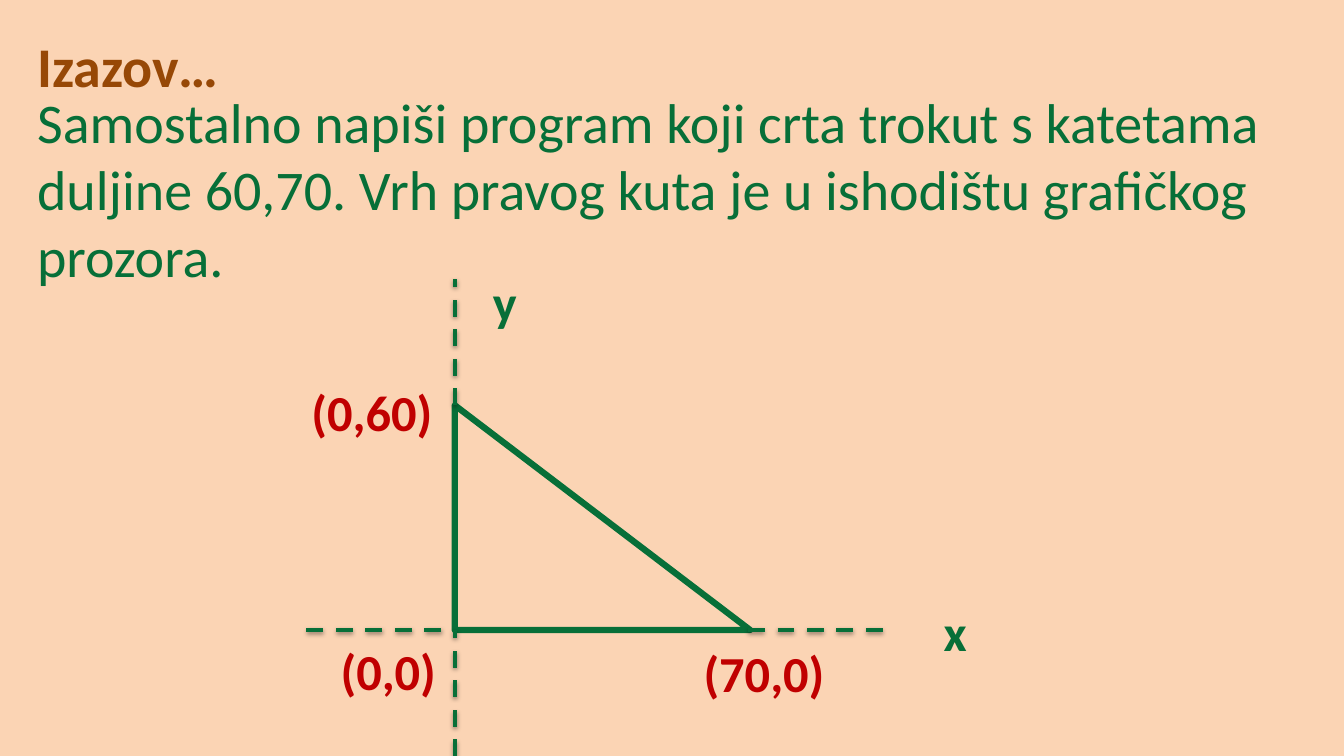
from dataclasses import dataclass

from lxml import etree
from pptx import Presentation
from pptx.dml.color import RGBColor
from pptx.enum.dml import MSO_LINE
from pptx.enum.shapes import MSO_CONNECTOR, MSO_SHAPE
from pptx.enum.text import MSO_ANCHOR
from pptx.oxml import parse_xml
from pptx.oxml.ns import nsdecls, qn
from pptx.util import Inches, Pt

RIGHT_TRIANGLE = MSO_SHAPE.RIGHT_TRIANGLE
STRAIGHT = MSO_CONNECTOR.STRAIGHT
DASH = MSO_LINE.DASH
TOP = MSO_ANCHOR.TOP
BLANK_LAYOUT = 6


@dataclass(frozen=True)
class Theme:
    font: str = "Calibri"
    background: RGBColor = RGBColor(0xFB, 0xD4, 0xB4)
    heading: RGBColor = RGBColor(0x97, 0x48, 0x06)
    green: RGBColor = RGBColor(0x07, 0x6F, 0x38)
    red: RGBColor = RGBColor(0xC0, 0x00, 0x00)
    text_size: Pt = Pt(40)
    label_size: Pt = Pt(36)
    triangle_width: Pt = Pt(4.5)
    axis_width: Pt = Pt(3)


THEME = Theme()

# Triangle geometry in inches: the right angle sits at the origin of the axes.
ORIGIN_X, ORIGIN_Y = 4.51, 6.25
BASE, HEIGHT = 2.93, 2.23
APEX_Y = ORIGIN_Y - HEIGHT
AXIS_Y_LENGTH = 1.25
AXIS_X_LENGTH = 1.42
LABEL_HEIGHT = 0.71
AXIS_LABEL_WIDTH, POINT_LABEL_WIDTH = 0.79, 1.54


def add_text(slide, text, left, top, width, height, size, color, bold=True):
    box = slide.shapes.add_textbox(Inches(left), Inches(top), Inches(width), Inches(height))
    frame = box.text_frame
    frame.word_wrap = True
    frame.vertical_anchor = TOP
    run = frame.paragraphs[0].add_run()
    run.text = text
    run.font.name = THEME.font
    run.font.size = size
    run.font.bold = bold
    run.font.color.rgb = color


def add_label(slide, text, left, top, width, color):
    add_text(slide, text, left, top, width, LABEL_HEIGHT, THEME.label_size, color)


def add_triangle(slide):
    triangle = slide.shapes.add_shape(
        RIGHT_TRIANGLE, Inches(ORIGIN_X), Inches(APEX_Y), Inches(BASE), Inches(HEIGHT)
    )
    triangle.shadow.inherit = False
    triangle.fill.background()
    triangle.line.color.rgb = THEME.green
    triangle.line.width = THEME.triangle_width


def add_soft_shadow(connector):
    """Put a faint shadow just below the line."""
    effects = parse_xml(f"<a:effectLst {nsdecls('a')}/>")
    shadow = etree.SubElement(
        effects, qn("a:outerShdw"),
        blurRad=str(Pt(3.1)), dist=str(Pt(1.6)), dir="5400000", rotWithShape="0",
    )
    color = etree.SubElement(shadow, qn("a:srgbClr"), val="000000")
    etree.SubElement(color, qn("a:alpha"), val="38000")
    connector._element.spPr.append(effects)


def add_axis_part(slide, start_x, start_y, end_x, end_y):
    connector = slide.shapes.add_connector(
        STRAIGHT, Inches(start_x), Inches(start_y), Inches(end_x), Inches(end_y)
    )
    connector.line.color.rgb = THEME.green
    connector.line.width = THEME.axis_width
    connector.line.dash_style = DASH
    add_soft_shadow(connector)


def add_axes(slide):
    for start_y in (APEX_Y, ORIGIN_Y + AXIS_Y_LENGTH):
        add_axis_part(slide, ORIGIN_X, start_y, ORIGIN_X, start_y - AXIS_Y_LENGTH)
    for start_x in (3.04, 7.42):
        add_axis_part(slide, start_x, ORIGIN_Y, start_x + AXIS_X_LENGTH, ORIGIN_Y)


def main():
    presentation = Presentation()
    presentation.slide_width = Inches(13.33)
    presentation.slide_height = Inches(7.5)
    slide = presentation.slides.add_slide(presentation.slide_layouts[BLANK_LAYOUT])
    slide.background.fill.solid()
    slide.background.fill.fore_color.rgb = THEME.background

    add_text(slide, "Izazov…", 0.27, 0.26, 12, 1.01, THEME.text_size, THEME.heading)
    add_text(
        slide,
        "Samostalno napiši program koji crta trokut s katetama duljine 60,70. "
        "Vrh pravog kuta je u ishodištu grafičkog prozora.",
        0.27, 0.82, 12.5, 4.95, THEME.text_size, THEME.green, bold=False,
    )

    add_triangle(slide)
    add_axes(slide)
    for text, left, top in (("y", 4.79, 2.64), ("x", 9.26, 5.91)):
        add_label(slide, text, left, top, AXIS_LABEL_WIDTH, THEME.green)
    for text, left, top in (("(0,0)", 3.28, 6.3), ("(0,60)", 2.99, 3.73), ("(70,0)", 6.88, 6.32)):
        add_label(slide, text, left, top, POINT_LABEL_WIDTH, THEME.red)

    presentation.save("out.pptx")


if __name__ == "__main__":
    main()
